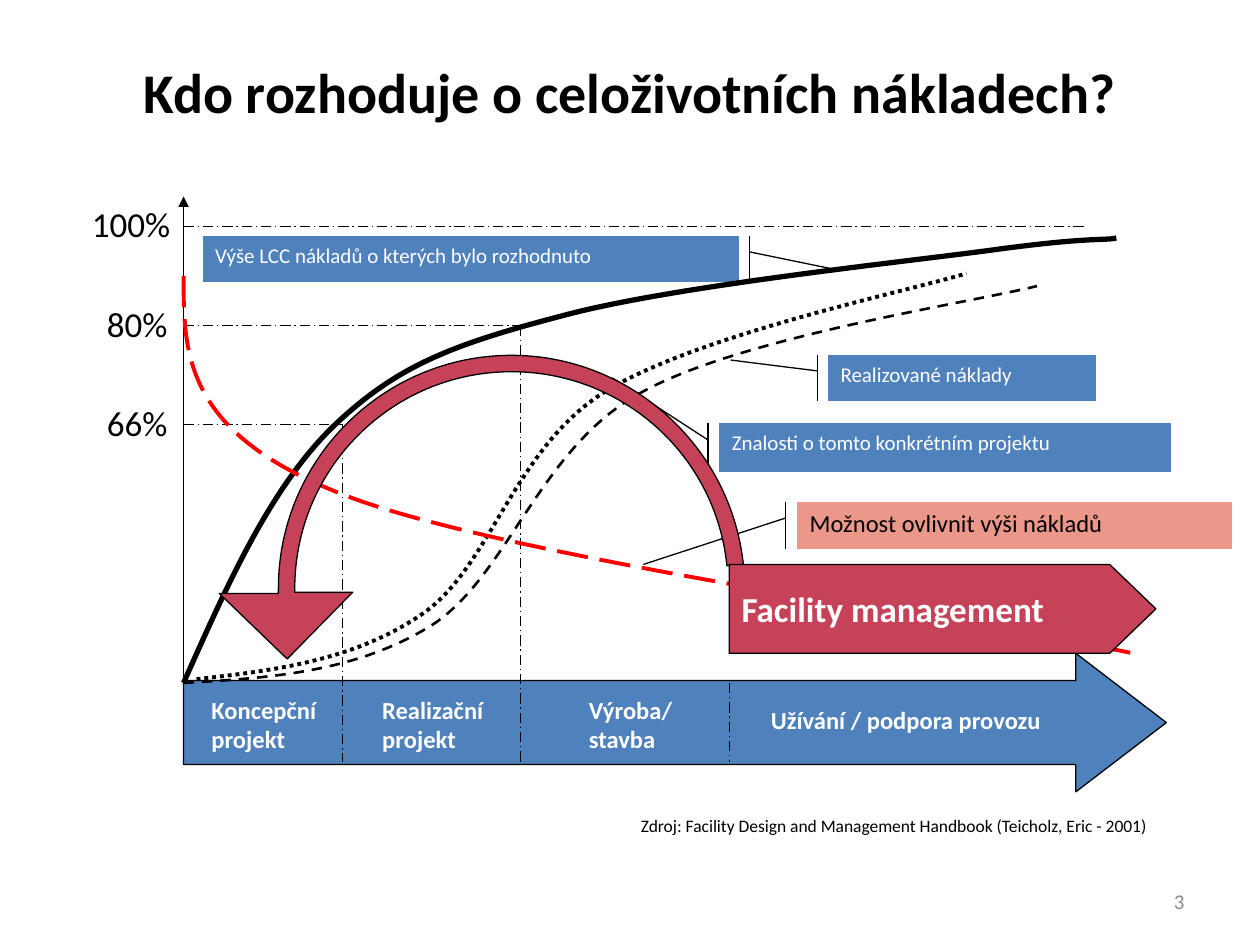
import pptx
import pptx.dml.color
import pptx.enum.dml
import pptx.enum.shapes
import pptx.enum.text
import pptx.oxml
import pptx.oxml.ns
import pptx.util

color = pptx.dml.color.RGBColor.from_string
SHAPES = pptx.enum.shapes.MSO_SHAPE
DASHES = pptx.enum.dml.MSO_LINE
ALIGN = pptx.enum.text.PP_ALIGN
ANCHOR = pptx.enum.text.MSO_ANCHOR
FIT = pptx.enum.text.MSO_AUTO_SIZE.SHAPE_TO_FIT_TEXT
NAMESPACE = pptx.oxml.ns.nsdecls("a")

BLACK, WHITE, RED = "000000", "FFFFFF", "FF0000"
BLUE, CRIMSON, SALMON, GREY = "4F81BD", "C64258", "EB9789", "8C8C8C"

presentation = pptx.Presentation()
presentation.slide_width = pptx.util.Inches(10)
presentation.slide_height = pptx.util.Inches(7.5)
slide = presentation.slides.add_slide(presentation.slide_layouts[6])

# The grid has 100 columns and 75 rows of square cells
CELL = presentation.slide_width / 100
AXIS, BASE, BOTTOM = 14.57, 54.2, 60.5
PHASE_ENDS = [27.2, 41.3, 57.9]


def paint(shape, fill=None, line=BLACK, width=0.75, dash=None):
    shape.shadow.inherit = False
    if fill:
        shape.fill.solid()
        shape.fill.fore_color.rgb = color(fill)
    else:
        shape.fill.background()
    shape.line.color.rgb = color(line)
    shape.line.width = pptx.util.Pt(width)
    if dash:
        shape.line.dash_style = dash


def write(shape, text, size, ink, bold=False, align=ALIGN.LEFT, anchor=ANCHOR.TOP,
          wrap=True, fit=None):
    frame = shape.text_frame
    frame.text = text
    frame_format = {"word_wrap": wrap, "vertical_anchor": anchor, "auto_size": fit}
    for name, value in frame_format.items():
        setattr(frame, name, value)
    font_format = {"name": "Calibri", "size": pptx.util.Pt(size), "bold": bold}
    for paragraph in frame.paragraphs:
        paragraph.alignment = align
        for run in paragraph.runs:
            for name, value in font_format.items():
                setattr(run.font, name, value)
            run.font.color.rgb = color(ink)


# Life-cycle arrow along the bottom
life_cycle = slide.shapes.add_shape(
    SHAPES.RIGHT_ARROW, *[round(n * CELL) for n in (AXIS, 51.85, 78, 11)])
life_cycle.adjustments[0], life_cycle.adjustments[1] = 0.606, 0.653
paint(life_cycle, BLUE)

# Vertical axis, then guides for the percentages and the phases
lines = [
    (AXIS, BASE, AXIS, 15.6, None),
    (AXIS, 18, 86.2, 18, DASHES.LONG_DASH_DOT),
    (PHASE_ENDS[2], BASE, PHASE_ENDS[2], BOTTOM, DASHES.LONG_DASH_DOT),
]
for phase_end, level in zip(PHASE_ENDS, (33.7, 25.85)):
    lines.append((AXIS, level, phase_end, level, DASHES.LONG_DASH_DOT))
    lines.append((phase_end, level, phase_end, BOTTOM, DASHES.LONG_DASH_DOT))
for *ends, dash in lines:
    connector = slide.shapes.add_connector(
        pptx.enum.shapes.MSO_CONNECTOR.STRAIGHT, *[round(n * CELL) for n in ends])
    connector.line.color.rgb = color(BLACK)
    connector.line.width = pptx.util.Pt(0.75)
    if dash:
        connector.line.dash_style = dash
    else:
        connector.line._get_or_add_ln().append(
            pptx.oxml.parse_xml(f'<a:tailEnd {NAMESPACE} type="triangle"/>'))
    connector._element.spPr.append(pptx.oxml.parse_xml(f"<a:effectLst {NAMESPACE}/>"))

# Callouts naming the curves: place, pointer, fill, text, size, ink
callouts = [
    ((16.1, 18.75, 42.55, 3.6), (0.346, 1.02, 0.74, 1.182), BLUE,
     "Výše LCC nákladů o kterých bylo rozhodnuto", 12, WHITE),
    ((65.73, 28.2, 21.25, 3.6), (0.346, -0.039, 0.106, -0.364), BLUE,
     "Realizované náklady", 12, WHITE),
    ((57.1, 33.6, 35.85, 3.85), (0.346, -0.025, -0.938, -0.237), BLUE,
     "Znalosti o tomto konkrétním projektu", 12, WHITE),
    ((63.27, 39.84, 34.5, 3.7), (0.346, -0.027, 1.341, -0.354), SALMON,
     "Možnost ovlivnit výši nákladů", 14, BLACK),
]
for place, pointer, fill, text, size, ink in callouts:
    callout = slide.shapes.add_shape(
        SHAPES.LINE_CALLOUT_1_ACCENT_BAR, *[round(n * CELL) for n in place])
    for index, value in enumerate(pointer):
        callout.adjustments[index] = value
    paint(callout, fill)
    write(callout, text, size, ink)

# Curves and the bent arrow: a start, then straight steps (one point) or curved (three)
decided_costs = [
    (AXIS, BASE),
    [(18, 46.5), (21.4, 38.8), (26.4, 33.9)],
    [(31.4, 29.1), (35.7, 27.4), (44.5, 25.1)],
    [(53.3, 22.7), (71.8, 20.8), (79.1, 19.8)],
    [(86.5, 18.8), (87.8, 19.1), (88.6, 18.9)],
]
realized_costs = [
    (AXIS, BASE),
    [(21.4, 53.8), (28.2, 53.4), (34.3, 49.6)],
    [(40.3, 45.7), (42.8, 35.6), (50.8, 31.2)],
    [(58.8, 26.7), (77.2, 24), (82.3, 22.7)],
]
project_knowledge = [
    (15.6, 53.9),
    [(21.9, 53.2), (28.3, 52.4), (33.7, 48.6)],
    [(39, 44.8), (40.8, 35.6), (48, 31.1)],
    [(55.2, 26.6), (72.1, 23.1), (76.7, 21.7)],
]
influence = [
    (AXIS, 21.9),
    [(AXIS, 28.1), (AXIS, 34.3), (27.1, 39.2)],
    [(39.6, 44.2), (79.1, 49.6), (89.7, 51.8)],
]
feedback_arrow = [
    (23.4, 47),
    [(23.4, 46.9), (23.4, 46.8), (23.4, 46.7)],
    [(23.4, 37.2), (31.1, 29.5), (40.6, 29.5)],
    [(49.4, 29.5), (56.8, 36.1), (57.7, 44.9)],
    [(59, 44.8)],
    [(58, 35.4), (50, 28.2), (40.6, 28.2)],
    [(30.4, 28.2), (22.1, 36.5), (22.1, 46.7)],
    [(22.1, 46.8), (22.1, 46.9), (22.1, 47.1)],
    [(17.4, 47.1)], [(22.8, 52.3)], [(28, 47)], [(23.4, 47)],
]
outlines = [
    (decided_costs, {"width": 3}),
    (realized_costs, {"width": 1.5, "dash": DASHES.DASH}),
    (project_knowledge, {"width": 2.25, "dash": DASHES.ROUND_DOT}),
    (influence, {"line": RED, "width": 2.25, "dash": DASHES.LONG_DASH}),
    (feedback_arrow, {"fill": CRIMSON}),
]
for (start, *steps), look in outlines:
    builder = slide.shapes.build_freeform(*[round(n * CELL) for n in start])
    builder.add_line_segments(
        [(round(x * CELL), round(y * CELL)) for step in steps for x, y in step],
        close="fill" in look)
    outline = builder.convert_to_shape()
    paint(outline, **look)
    # Join each three points of a curved step into one Bézier segment
    segments = iter(list(outline._element.iter(pptx.oxml.ns.qn("a:lnTo"))))
    for step in steps:
        first, *others = [next(segments) for point in step]
        if others:
            curve = pptx.oxml.parse_xml(f"<a:cubicBezTo {NAMESPACE}/>")
            first.addprevious(curve)
            for segment in (first, *others):
                curve.append(segment[0])
                segment.getparent().remove(segment)

# Facility management banner
banner = slide.shapes.add_shape(
    SHAPES.PENTAGON, *[round(n * CELL) for n in (57.87, 44.8, 33.87, 7.05)])
banner.adjustments[0] = 0.52
paint(banner, CRIMSON)
write(banner, "Facility management", 20, WHITE, bold=True, anchor=ANCHOR.MIDDLE, wrap=False)

# Title, axis labels, phase names, source and page number
percent = {"size": 20, "ink": BLACK, "wrap": False, "fit": FIT}
phase = {"size": 14, "ink": WHITE, "bold": True, "wrap": False, "fit": FIT}
labels = [
    ((6.2, 15.6, 8.3, 4.4), "100%", {**percent, "align": ALIGN.RIGHT}),
    ((7.5, 31.4, 6.9, 4.4), "66%", percent),
    ((15.8, 54.65, 10.4, 5.7), "Koncepční\nprojekt", phase),
    ((7.5, 23.5, 6.9, 4.4), "80%", percent),
    ((29.35, 54.65, 10.1, 5.7), "Realizační\nprojekt", phase),
    ((45.75, 54.65, 8.7, 5.7), "Výroba/\nstavba", phase),
    ((60.2, 55.5, 23.6, 3.4), "Užívání / podpora provozu", phase),
    ((49.15, 64.2, 42.8, 2.7),
     "Zdroj: Facility Design and Management Handbook (Teicholz, Eric - 2001)",
     {"size": 10, "ink": BLACK, "align": ALIGN.RIGHT, "wrap": False, "fit": FIT}),
    ((5, 3, 90, 8.5), "Kdo rozhoduje o celoživotních nákladech?",
     {"size": 32, "ink": BLACK, "bold": True, "align": ALIGN.CENTER, "anchor": ANCHOR.MIDDLE}),
    ((71.7, 69.5, 23.3, 4), "3",
     {"size": 12, "ink": GREY, "align": ALIGN.RIGHT, "anchor": ANCHOR.MIDDLE}),
]
for place, text, look in labels:
    write(slide.shapes.add_textbox(*[round(n * CELL) for n in place]), text, **look)

presentation.save("out.pptx")
